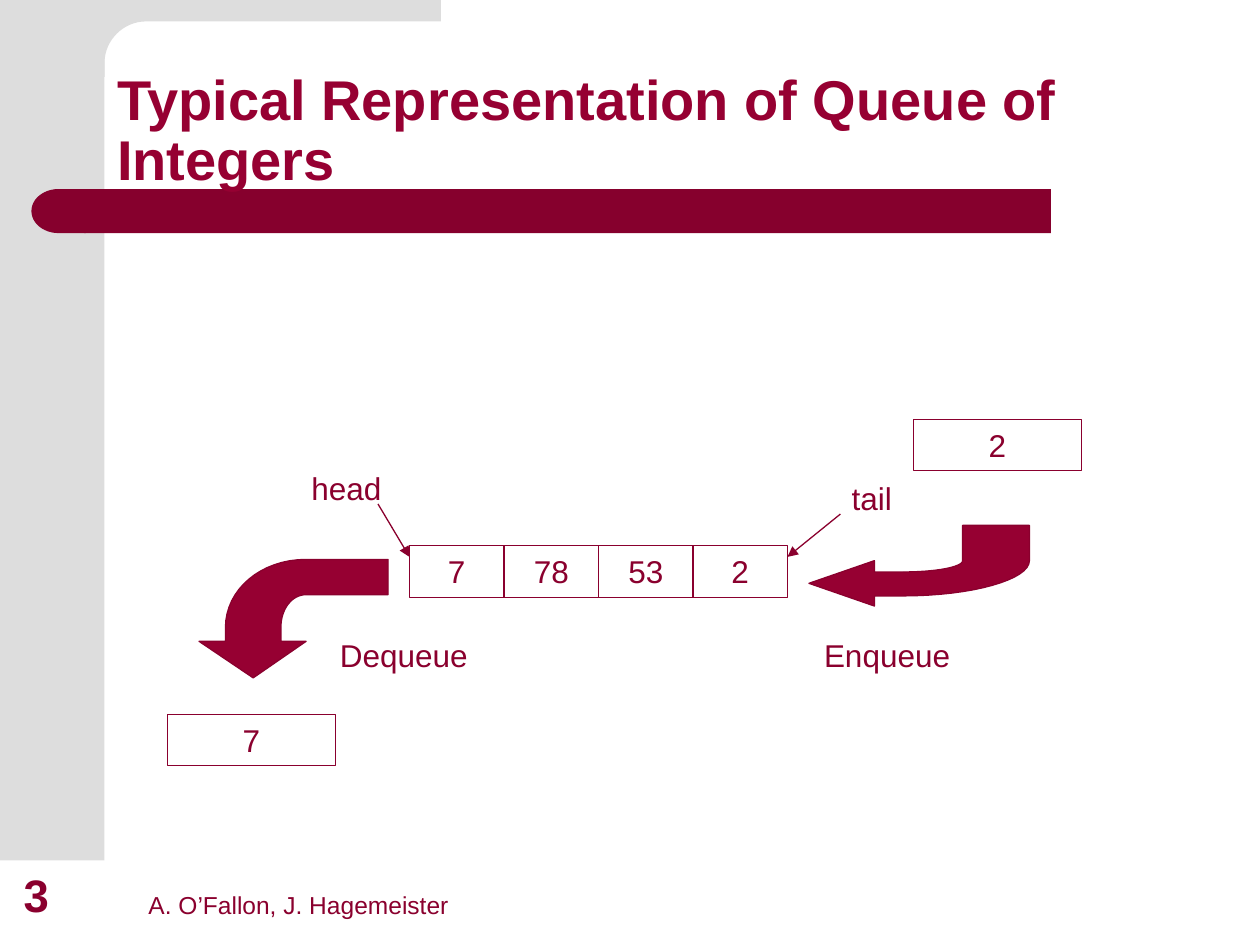
from lxml import etree
from pptx import Presentation
from pptx.dml.color import RGBColor
from pptx.enum import shapes, text
from pptx.oxml.ns import qn
from pptx.util import Inches, Pt

GREY = RGBColor(0xDD, 0xDD, 0xDD)
BAR = RGBColor(0x86, 0x00, 0x2D)
INK = RGBColor(0x8A, 0x00, 0x2E)
ACCENT = RGBColor(0x96, 0x00, 0x32)
MSO = shapes.MSO_SHAPE
ALIGN = text.PP_ALIGN
ANCHOR = text.MSO_ANCHOR

prs = Presentation()
prs.slide_width, prs.slide_height = Inches(10), Inches(7.5)
s = prs.slides.add_slide(prs.slide_layouts[5])


def add_text(words, x, y, w, h, sp=None, size=18, color=INK, bold=False,
             align=ALIGN.CENTER, anchor=ANCHOR.TOP, line=None, spacing=None):
    """Put text in a given shape, an outlined box (line in points) or a text box."""
    box = [Inches(v) for v in (x, y, w, h)]
    if sp is not None:
        sp.left, sp.top, sp.width, sp.height = box
    elif line:
        sp = s.shapes.add_shape(MSO.RECTANGLE, *box)
        sp.shadow.inherit = False
        sp.fill.background()
        sp.line.color.rgb, sp.line.width = INK, Pt(line)
    else:
        sp = s.shapes.add_textbox(*box)
    tf = sp.text_frame
    tf.word_wrap, tf.auto_size = True, text.MSO_AUTO_SIZE.NONE
    tf.vertical_anchor = anchor
    p = tf.paragraphs[0]
    p.alignment, p.line_spacing = align, spacing
    r = p.add_run()
    r.text = words
    r.font.name, r.font.size, r.font.bold = "Arial", Pt(size), bold
    r.font.color.rgb = color


def add_outline(start, steps, fill, line=None):
    """Draw a closed outline; a step is a point, or three points of a curve."""
    points = [start]
    for step in steps:
        if len(step) == 2:
            points.append(step)
            continue
        curve = (points[-1], *step)
        for i in range(1, 17):
            t = i / 16
            weights = ((1 - t) ** 3, 3 * t * (1 - t) ** 2, 3 * t * t * (1 - t), t ** 3)
            points.append(tuple(sum(k * c[a] for k, c in zip(weights, curve))
                                for a in (0, 1)))
    emu = [(Inches(x), Inches(y)) for x, y in points]
    builder = s.shapes.build_freeform(*emu[0], scale=1.0)
    builder.add_line_segments(emu[1:], close=True)
    sp = builder.convert_to_shape()
    sp.shadow.inherit = False
    sp.fill.solid()
    sp.fill.fore_color.rgb = fill
    if line:
        sp.line.color.rgb, sp.line.width = line, Pt(0.75)
    else:
        sp.line.fill.background()


# Side band with its rounded corner, and the title bar
add_outline((3.5, 0), [(3.5, 0.17), (1.16, 0.17),
                       ((0.98, 0.17), (0.83, 0.32), (0.83, 0.5)),
                       (0.83, 0.61), (0.5, 0.61), (0.5, 0)], GREY)
for kind, x, y, w, h, color in (
        (MSO.RECTANGLE, 0, 0, 0.83, 6.83, GREY),
        (MSO.RECTANGLE, 0.67, 1.5, 7.67, 0.35, BAR),
        (MSO.FLOWCHART_DELAY, 0.25, 1.5, 0.43, 0.35, BAR)):
    sp = s.shapes.add_shape(kind, Inches(x), Inches(y), Inches(w), Inches(h))
    sp.shadow.inherit = False
    sp.fill.solid()
    sp.fill.fore_color.rgb = color
    sp.line.fill.background()
sp.element.spPr.xfrm.set("flipH", "1")

# Title, in front of the bar
title = s.shapes.title
s.shapes.element.append(title.element)
add_text("Typical Representation of Queue of Integers", 0.83, 0.33, 8.67, 1.25,
         sp=title, size=32, color=ACCENT, bold=True, align=ALIGN.LEFT,
         anchor=ANCHOR.BOTTOM, spacing=0.9)

# Footer and slide number
add_text("A. O’Fallon, J. Hagemeister", 1.08, 6.83, 3.75, 0.52, size=14,
         align=ALIGN.LEFT, anchor=ANCHOR.BOTTOM)
add_text("3", 0.09, 6.83, 0.64, 0.53, size=26, bold=True, align=ALIGN.LEFT,
         anchor=ANCHOR.BOTTOM)

# Queue cells, and the items entering and leaving
for i, value in enumerate(("7", "78", "53", "2")):
    add_text(value, 3.25 + 0.75 * i, 4.33, 0.75, 0.41, line=0.75)
add_text("2", 7.25, 3.33, 1.33, 0.4, line=0.25)
add_text("7", 1.33, 5.67, 1.33, 0.4, line=0.25)

# Labels
for label, x, y, w in (("head", 2.25, 3.67, 1), ("tail", 6.42, 3.75, 1),
                       ("Dequeue", 2.58, 5, 1.25), ("Enqueue", 6.33, 5, 1.42)):
    add_text(label, x, y, w, 0.4)

# Head and tail pointers
for x1, y1, x2, y2 in ((3, 4, 3.25, 4.42), (6.67, 4.08, 6.25, 4.42)):
    c = s.shapes.add_connector(shapes.MSO_CONNECTOR.STRAIGHT, Inches(x1),
                               Inches(y1), Inches(x2), Inches(y2))
    c.line.color.rgb, c.line.width = INK, Pt(0.75)
    etree.SubElement(c.line._get_or_add_ln(), qn("a:tailEnd"), type="triangle")
    etree.SubElement(c.element.spPr, qn("a:effectLst"))

# Enqueue and dequeue block arrows
add_outline((6.42, 4.63), [(6.94, 4.81), (6.94, 4.73), (7.16, 4.73),
                           ((7.72, 4.73), (8.17, 4.6), (8.17, 4.45)),
                           (8.17, 4.17), (7.64, 4.17), (7.64, 4.45),
                           ((7.64, 4.5), (7.43, 4.54), (7.16, 4.54)),
                           (6.94, 4.54), (6.94, 4.45)], ACCENT, INK)
add_outline((2.01, 5.38), [(1.58, 5.09), (1.79, 5.09), (1.79, 4.98),
                           ((1.79, 4.68), (2.07, 4.44), (2.43, 4.44)),
                           (3.08, 4.44), (3.08, 4.72), (2.43, 4.72),
                           ((2.32, 4.72), (2.23, 4.83), (2.23, 4.98)),
                           (2.23, 5.09), (2.43, 5.09)], ACCENT, INK)

prs.save("out.pptx")
